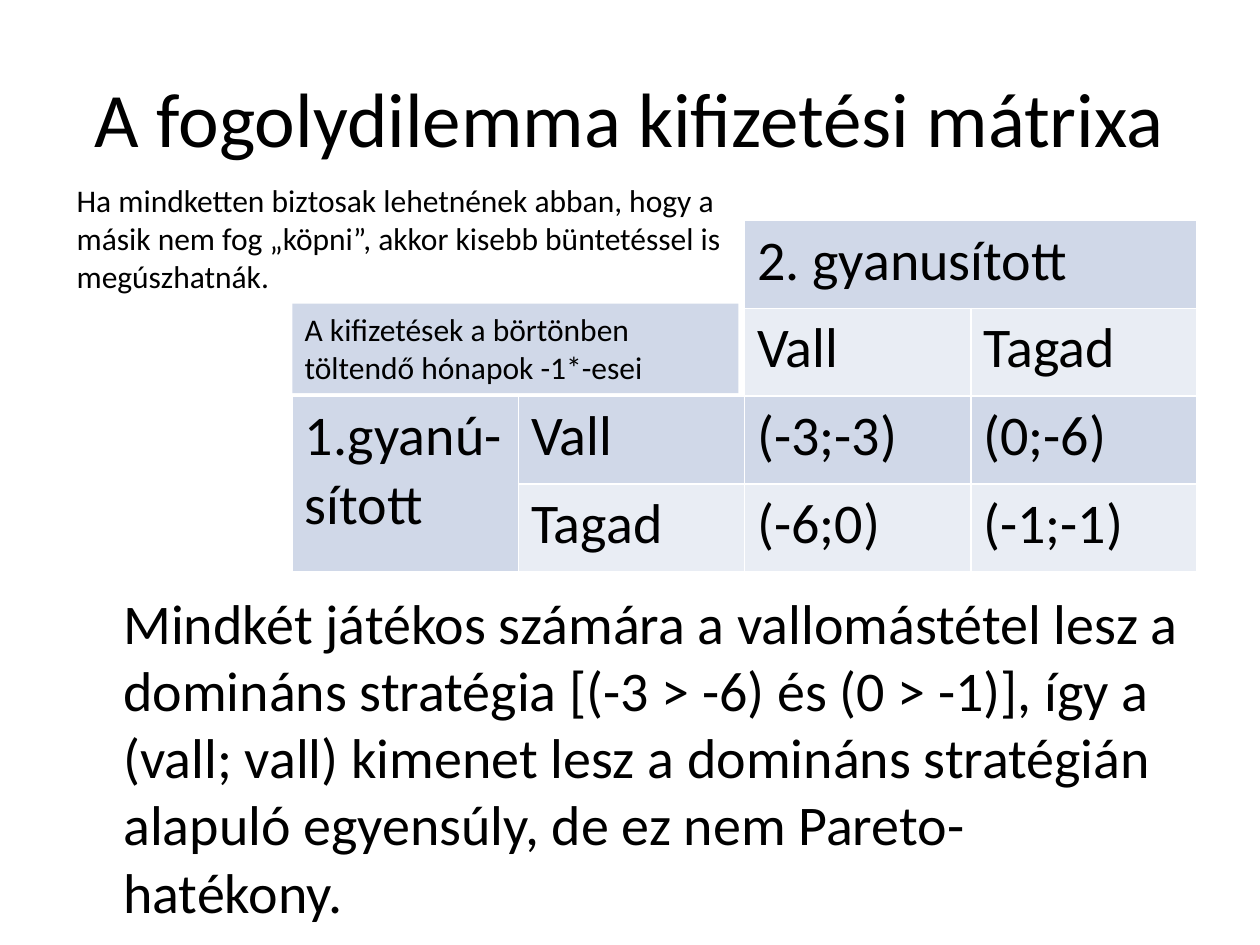
"""Build the slide with the payoff matrix of the prisoner's dilemma."""
from dataclasses import dataclass
from typing import Optional

from lxml import etree
from pptx import Presentation
from pptx import util as u
from pptx.dml import color
from pptx.enum import shapes, text
from pptx.oxml import ns

FONT = "Calibri"
BLACK, WHITE = "000000", "FFFFFF"
DARK_BAND, LIGHT_BAND = "D0D8E8", "E9EDF4"
MATRIX_LEFT, MATRIX_TOP, MATRIX_WIDTH, MATRIX_HEIGHT = 2.32, 1.75, 7.18, 2.79
MATRIX_SIZE = 4


@dataclass(frozen=True)
class Block:
    wording: str
    left: float
    top: float
    width: float
    height: float
    size: int
    fill: Optional[str] = None
    align: text.PP_ALIGN = text.PP_ALIGN.LEFT
    anchor: text.MSO_ANCHOR = text.MSO_ANCHOR.TOP
    indent: float = 0


@dataclass(frozen=True)
class Entry:
    row: int
    column: int
    wording: str
    fill: Optional[str]
    rows: int = 1
    columns: int = 1


HEADING = Block("A fogolydilemma kifizetési mátrixa", 0.5, 0.3, 9, 1.25, 44,
                align=text.PP_ALIGN.CENTER, anchor=text.MSO_ANCHOR.MIDDLE)
CONCLUSION = Block(
    "Mindkét játékos számára a vallomástétel lesz a domináns stratégia "
    "[(-3 > -6) és (0 > -1)], így a (vall; vall) kimenet lesz a domináns "
    "stratégián alapuló egyensúly, de ez nem Pareto-hatékony.",
    0.5, 4.62, 9, 2.68, 32, indent=0.38)
REMARK = Block(
    "Ha mindketten biztosak lehetnének abban, hogy a másik nem fog „köpni”, "
    "akkor kisebb büntetéssel is megúszhatnák.", 0.51, 1.39, 5.35, 1.01, 18)
UNIT_NOTE = Block("A kifizetések a börtönben töltendő hónapok -1*-esei",
                  MATRIX_LEFT, 2.41, 3.54, 0.71, 18, fill=DARK_BAND,
                  anchor=text.MSO_ANCHOR.TOP)

ENTRIES = (
    Entry(0, 0, "", None, rows=2, columns=2),
    Entry(0, 2, "2. gyanusított", DARK_BAND, columns=2),
    Entry(1, 2, "Vall", LIGHT_BAND),
    Entry(1, 3, "Tagad", LIGHT_BAND),
    Entry(2, 0, "1.gyanú- sított", DARK_BAND, rows=2),
    Entry(2, 1, "Vall", DARK_BAND),
    Entry(2, 2, "(-3;-3)", DARK_BAND),
    Entry(2, 3, "(0;-6)", DARK_BAND),
    Entry(3, 1, "Tagad", LIGHT_BAND),
    Entry(3, 2, "(-6;0)", LIGHT_BAND),
    Entry(3, 3, "(-1;-1)", LIGHT_BAND),
)


def rgb(value: str) -> color.RGBColor:
    return color.RGBColor.from_string(value)


def paint(fill, value: Optional[str]) -> None:
    if value is None:
        fill.background()
    else:
        fill.solid()
        fill.fore_color.rgb = rgb(value)


def write(paragraph, wording: str, size: int) -> None:
    run = paragraph.add_run()
    run.text = wording
    run.font.name = FONT
    run.font.size = u.Pt(size)
    run.font.color.rgb = rgb(BLACK)


def draw_block(slide, block: Block) -> None:
    bounds = [u.Inches(n) for n in (block.left, block.top, block.width, block.height)]
    if block.fill:
        holder = slide.shapes.add_shape(shapes.MSO_SHAPE.RECTANGLE, *bounds)
        holder.shadow.inherit = False
        paint(holder.fill, block.fill)
        holder.line.fill.background()
    else:
        holder = slide.shapes.add_textbox(*bounds)
    frame = holder.text_frame
    frame.word_wrap = True
    frame.vertical_anchor = block.anchor
    paragraph = frame.paragraphs[0]
    paragraph.alignment = block.align
    if block.indent:
        paragraph._p.get_or_add_pPr().set("marL", str(u.Inches(block.indent)))
    write(paragraph, block.wording, block.size)


def outline(cell) -> None:
    properties = cell._tc.get_or_add_tcPr()
    for position, side in enumerate(("lnL", "lnR", "lnT", "lnB")):
        border = etree.Element(ns.qn(f"a:{side}"), w=str(u.Pt(1)))
        solid = etree.SubElement(border, ns.qn("a:solidFill"))
        etree.SubElement(solid, ns.qn("a:srgbClr"), val=WHITE)
        properties.insert(position, border)


def draw_matrix(slide) -> None:
    matrix = slide.shapes.add_table(
        MATRIX_SIZE, MATRIX_SIZE, u.Inches(MATRIX_LEFT), u.Inches(MATRIX_TOP),
        u.Inches(MATRIX_WIDTH), u.Inches(MATRIX_HEIGHT)).table
    matrix.first_row = matrix.horz_banding = False
    for cell in matrix.iter_cells():
        paint(cell.fill, None)
        outline(cell)
    for entry in ENTRIES:
        cell = matrix.cell(entry.row, entry.column)
        if entry.rows * entry.columns > 1:
            cell.merge(matrix.cell(entry.row + entry.rows - 1,
                                   entry.column + entry.columns - 1))
        paint(cell.fill, entry.fill)
        if entry.wording:
            write(cell.text_frame.paragraphs[0], entry.wording, 32)


def main() -> None:
    deck = Presentation()
    deck.slide_width, deck.slide_height = u.Inches(10), u.Inches(7.5)
    slide = deck.slides.add_slide(deck.slide_layouts[6])
    draw_block(slide, HEADING)
    draw_block(slide, CONCLUSION)
    draw_matrix(slide)
    draw_block(slide, REMARK)
    draw_block(slide, UNIT_NOTE)
    deck.save("out.pptx")


if __name__ == "__main__":
    main()
